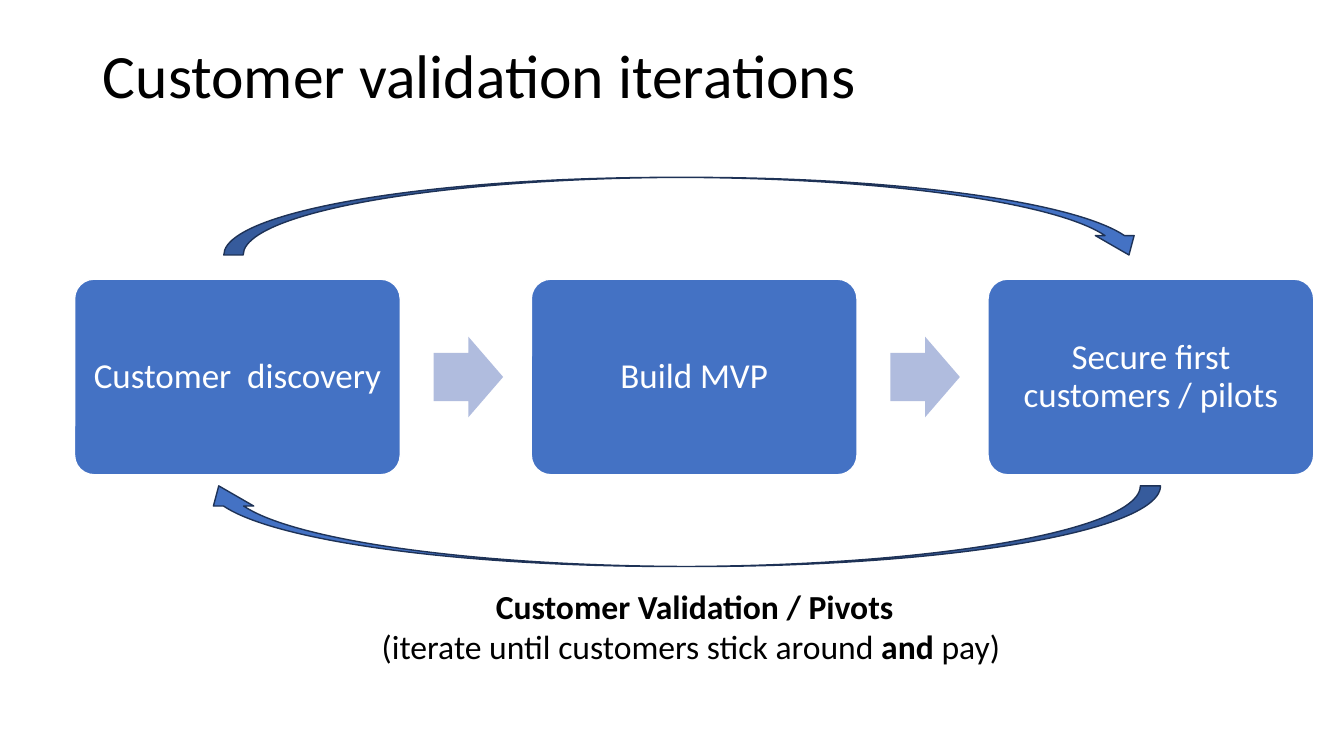
from pptx import Presentation
from pptx.dml.color import RGBColor
from pptx.enum import shapes, text
from pptx.util import Inches, Pt

FONT = "Calibri"
COLORS = {
    "blue": "4472C4",
    "pale": "B0BCDE",
    "outline": "1E3256",
    "white": "FFFFFF",
    "black": "000000",
}
STEPS = ["Customer  discovery", "Build MVP", "Secure first customers / pilots"]
BOX_LEFT, BOX_TOP, BOX_W, BOX_H = 0.74, 2.77, 3.23, 1.94
PITCH = 4.53
ARROW_W, ARROW_H, ARROW_OFFSET = 0.69, 0.8, 3.56


def color(name):
    return RGBColor.from_string(COLORS[name])


def style_run(r, size, name, bold=False):
    r.font.name = FONT
    r.font.size = Pt(size)
    r.font.bold = bold
    r.font.color.rgb = color(name)


def add_filled(s, kind, box, fill, line=None, adjustments=()):
    sp = s.shapes.add_shape(kind, *[Inches(v) for v in box])
    sp.shadow.inherit = False
    sp.fill.solid()
    sp.fill.fore_color.rgb = color(fill)
    if line:
        sp.line.color.rgb = color(line)
        sp.line.width = Pt(1)
    else:
        sp.line.fill.background()
    for i, value in enumerate(adjustments):
        sp.adjustments[i] = value
    return sp


def add_title(s, title):
    sp = s.shapes.title
    sp.left, sp.top = Inches(0.92), Inches(0.31)
    sp.width, sp.height = Inches(11.5), Inches(0.94)
    tf = sp.text_frame
    tf.text = title
    tf.vertical_anchor = text.MSO_ANCHOR.MIDDLE
    p = tf.paragraphs[0]
    p.alignment = text.PP_ALIGN.LEFT
    p.line_spacing = 0.9
    style_run(p.runs[0], 44, "black")


def add_step(s, left, label):
    sp = add_filled(s, shapes.MSO_SHAPE.ROUNDED_RECTANGLE,
                    (left, BOX_TOP, BOX_W, BOX_H), "blue", "white", [0.1])
    tf = sp.text_frame
    tf.text = label
    tf.word_wrap = True
    tf.vertical_anchor = text.MSO_ANCHOR.MIDDLE
    tf.margin_left = tf.margin_right = Inches(0.1)
    tf.margin_top = tf.margin_bottom = Inches(0.1)
    p = tf.paragraphs[0]
    p.alignment = text.PP_ALIGN.CENTER
    p.line_spacing = 0.9
    style_run(p.runs[0], 25, "white")


def add_step_arrow(s, left):
    top = BOX_TOP + (BOX_H - ARROW_H) / 2
    add_filled(s, shapes.MSO_SHAPE.RIGHT_ARROW,
               (left, top, ARROW_W, ARROW_H), "pale", adjustments=[0.6, 0.5])


def add_loop_arrow(s, box, rotation=0):
    sp = add_filled(s, shapes.MSO_SHAPE.CURVED_DOWN_ARROW, box, "blue", "outline")
    sp.rotation = rotation


def add_caption(s, box, lines):
    """Each line is a list of (wording, bold) pairs."""
    tf = s.shapes.add_textbox(*[Inches(v) for v in box]).text_frame
    tf.word_wrap = True
    for i, line in enumerate(lines):
        p = tf.add_paragraph() if i else tf.paragraphs[0]
        p.alignment = text.PP_ALIGN.CENTER
        for wording, bold in line:
            r = p.add_run()
            r.text = wording
            style_run(r, 24, "black", bold)


def main():
    prs = Presentation()
    prs.slide_width, prs.slide_height = Inches(13.33), Inches(7.5)
    s = prs.slides.add_slide(prs.slide_layouts[5])
    add_title(s, "Customer validation iterations")

    # Process steps with arrows between them
    for i, label in enumerate(STEPS):
        left = BOX_LEFT + i * PITCH
        add_step(s, left, label)
        if i < len(STEPS) - 1:
            add_step_arrow(s, left + ARROW_OFFSET)

    # Iteration loop: forward above, back below
    add_loop_arrow(s, (2.22, 1.76, 9.17, 0.77))
    add_loop_arrow(s, (1.97, 4.82, 9.54, 0.8), rotation=180)

    # Caption under the loop
    add_caption(s, (3.49, 5.76, 6.8, 0.91), [
        [("Customer Validation / Pivots", True)],
        [("(iterate until customers stick around ", False),
         ("and", True), (" pay) ", False)],
    ])
    prs.save("out.pptx")


if __name__ == "__main__":
    main()
